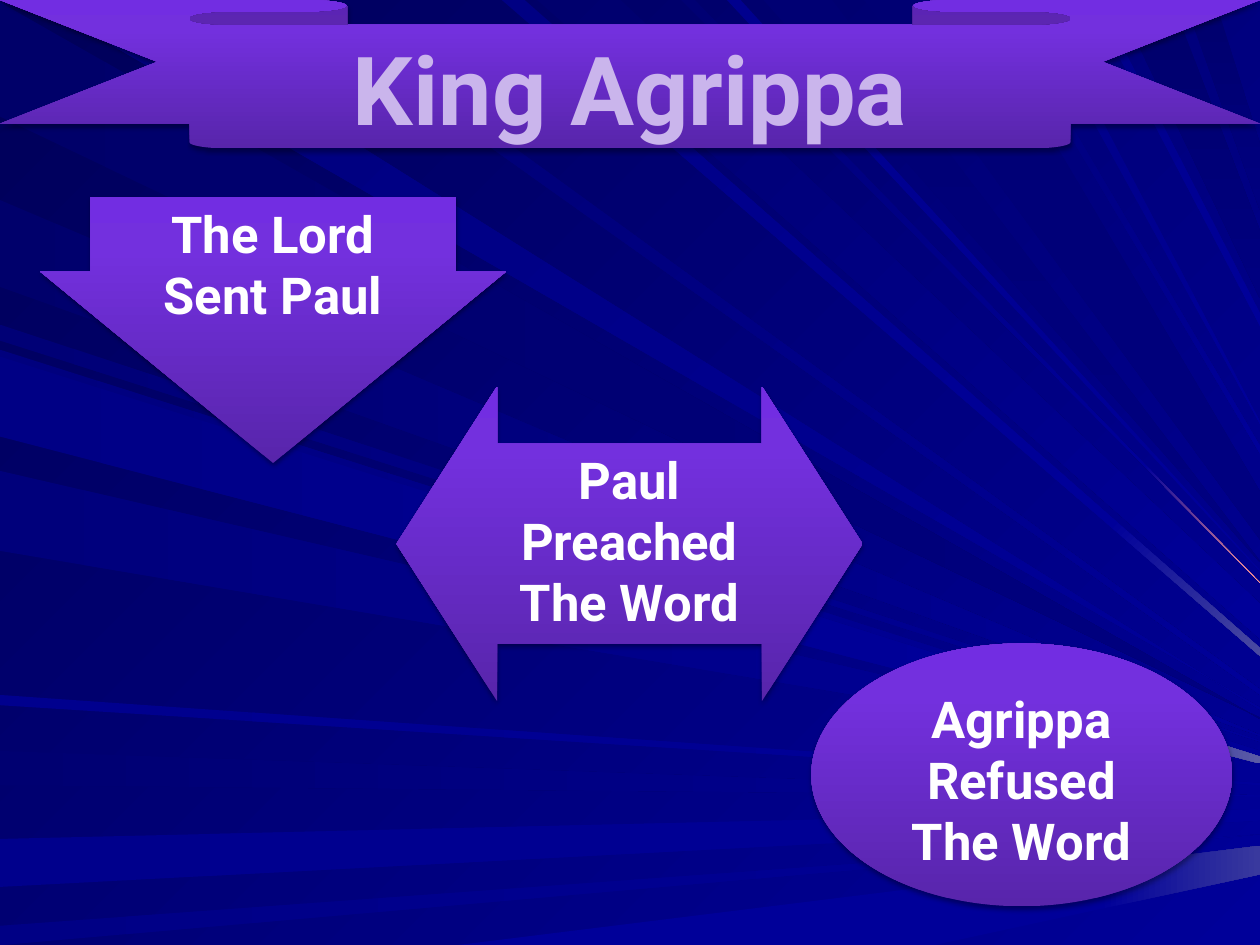
from copy import deepcopy

from lxml.etree import SubElement
from pptx import Presentation
from pptx.dml.color import RGBColor
from pptx.enum.shapes import MSO_SHAPE as Preset
from pptx.enum.text import MSO_ANCHOR as Anchor, MSO_AUTO_SIZE as AutoSize, PP_ALIGN as Align
from pptx.oxml.ns import qn
from pptx.util import Cm, Pt

WIDTH, HEIGHT = 28, 21
CM_PER_INCH = 2.54
TITLE_ONLY = 5

# Each ray runs from two places on one edge to two heights on the right edge (inches)
RAYS = [
    ("left", 0.02, 1.02, 6.28, 6.29, "000069 000080"),
    ("top", 0.29, 1.11, 6.21, 6.19, "00007B 000099"),
    ("left", 6.57, 6.87, 6.97, 6.96, "000071 000099"),
    ("left", 7.34, 7.76, 7.18, 7.08, "00008C 000099"),
    ("left", 8.1, 8.27, 7.3, 7.3, "000085 000099"),
    ("bottom", 4.01, 8.18, 7.65, 7.4, "000099 000099 39399E"),
    ("left", 2.84, 2.98, 6.49, 6.48, "000076 000099"),
    ("left", 1.75, 2.51, 6.44, 6.43, "00006B 000099"),
    ("top", 4.39, 4.59, 5.67, 5.74, "000083 000099 4A4AA1"),
    ("top", 4.7, 5.43, 5.28, 5.59, "00006D 000099"),
    ("top", 5.96, 6.08, 5.1, 5.1, "000073 000099 FF9999"),
    ("top", 6.68, 7.28, 4.91, 4.92, "000073 000080"),
    ("top", 9.77, 10.25, 2.02, 2.61, "00006B 000080"),
    ("top", 10.36, 10.63, 1.26, 1.84, "00006D 000080"),
    ("left", 3.06, 3.77, 6.63, 6.57, "00007E 000099"),
    ("left", 4.12, 4.82, 6.68, 6.67, "00007B 000099"),
    ("left", 6.08, 6.17, 6.87, 6.85, "00008E 000099"),
    ("top", 2.48, 2.72, 6.03, 6.08, "000070 000099"),
    ("top", 6.36, 6.48, 4.99, 5, "00008E 000099"),
    ("top", 7.56, 8.49, 4.3, 4.72, "000073 000080"),
    ("top", 8.65, 8.73, 3.9, 3.97, "000078 000099"),
    ("top", 8.98, 9.09, 3.69, 3.71, "000085 000099"),
    ("top", 9.53, 9.61, 2.74, 2.85, "00008A 000099"),
    ("left", 3.12, 3.82, 6.68, 6.62, "000085 000099 5A5AA6"),
]

# Story shapes: preset, left, top, width, height in cm, adjustments, text
STORY = [
    (Preset.DOWN_RIBBON, 0, 0, WIDTH, 3.3, [0.167, 0.699], ""),
    (Preset.DOWN_ARROW, 0.89, 4.37, 10.36, 5.92, [0.784, 0.719], "The Lord\nSent Paul"),
    (Preset.LEFT_RIGHT_ARROW, 8.81, 8.59, 10.36, 6.99, [0.637, 0.32], "Paul\nPreached\nThe Word"),
    (Preset.OVAL, 18.03, 14.3, 9.35, 5.84, [], "Agrippa\nRefused\nThe Word"),
]

rgb = RGBColor.from_string


def paint(fill, colors, angle):
    """Fill with a clockwise gradient; a third colour takes the last fifth."""
    fill.gradient()
    fill.gradient_angle = (360 - angle) % 360
    positions = [0, 1]
    if len(colors) == 3:
        first_stop = fill.gradient_stops[0]._gs
        first_stop.addnext(deepcopy(first_stop))
        positions = [0, 0.8, 1]
    for stop, color, position in zip(fill.gradient_stops, colors, positions):
        stop.color.rgb = rgb(color)
        stop.position = position


def write(frame, text, size, color):
    frame.text = text
    frame.word_wrap = True
    frame.auto_size = AutoSize.NONE
    frame.vertical_anchor = Anchor.TOP
    for paragraph in frame.paragraphs:
        paragraph.alignment = Align.CENTER
        for run in paragraph.runs:
            run.font.name = "Roboto"
            run.font.size = Pt(size)
            run.font.bold = True
            run.font.color.rgb = rgb(color)


prs = Presentation()
prs.slide_width, prs.slide_height = Cm(WIDTH), Cm(HEIGHT)
slide = prs.slides.add_slide(prs.slide_layouts[TITLE_ONLY])
paint(slide.background.fill, ["000058", "000099"], 45)

for edge, *places, colors in RAYS:
    start, end, far_end, far_start = [Cm(place * CM_PER_INCH) for place in places]
    if edge == "left":
        corners = [(0, start), (0, end)]
        angle = 0
    else:
        edge_y = Cm(HEIGHT) if edge == "bottom" else 0
        corners = [(start, edge_y), (end, edge_y)]
        angle = 0 if edge == "bottom" else 90 if colors.endswith("80") else 45
    corners += [(Cm(WIDTH), far_end), (Cm(WIDTH), far_start)]
    outline = slide.shapes.build_freeform(*corners[0])
    outline.add_line_segments(corners[1:], close=True)
    ray = outline.convert_to_shape()
    ray.shadow.inherit = False
    ray.line.fill.background()
    paint(ray.fill, colors.split(), angle)

for preset, left, top, width, height, adjustments, text in STORY:
    step = slide.shapes.add_shape(preset, Cm(left), Cm(top), Cm(width), Cm(height))
    for index, value in enumerate(adjustments):
        step.adjustments[index] = value
    step.line.fill.background()
    paint(step.fill, ["5825AB", "7330DE", "722DE2"], 270)

    step.shadow.inherit = False
    effects = step._element.spPr.find(qn("a:effectLst"))
    shadow = SubElement(effects, qn("a:outerShdw"), blurRad="40000", dist="23000",
                        dir="5400000", rotWithShape="0")
    shade = SubElement(shadow, qn("a:srgbClr"), val="000000")
    SubElement(shade, qn("a:alpha"), val="35000")
    if text:
        write(step.text_frame, text, 32, "FFFFFF")

title = slide.shapes.title
title.left, title.top, title.width, title.height = Cm(4.2), Cm(0.55), Cm(19.6), Cm(2.75)
write(title.text_frame, "King Agrippa", 60, "CAB5EC")
# The title lies on the ribbon, so it comes last in the drawing order
slide.shapes._spTree.append(title._element)

prs.save("out.pptx")
